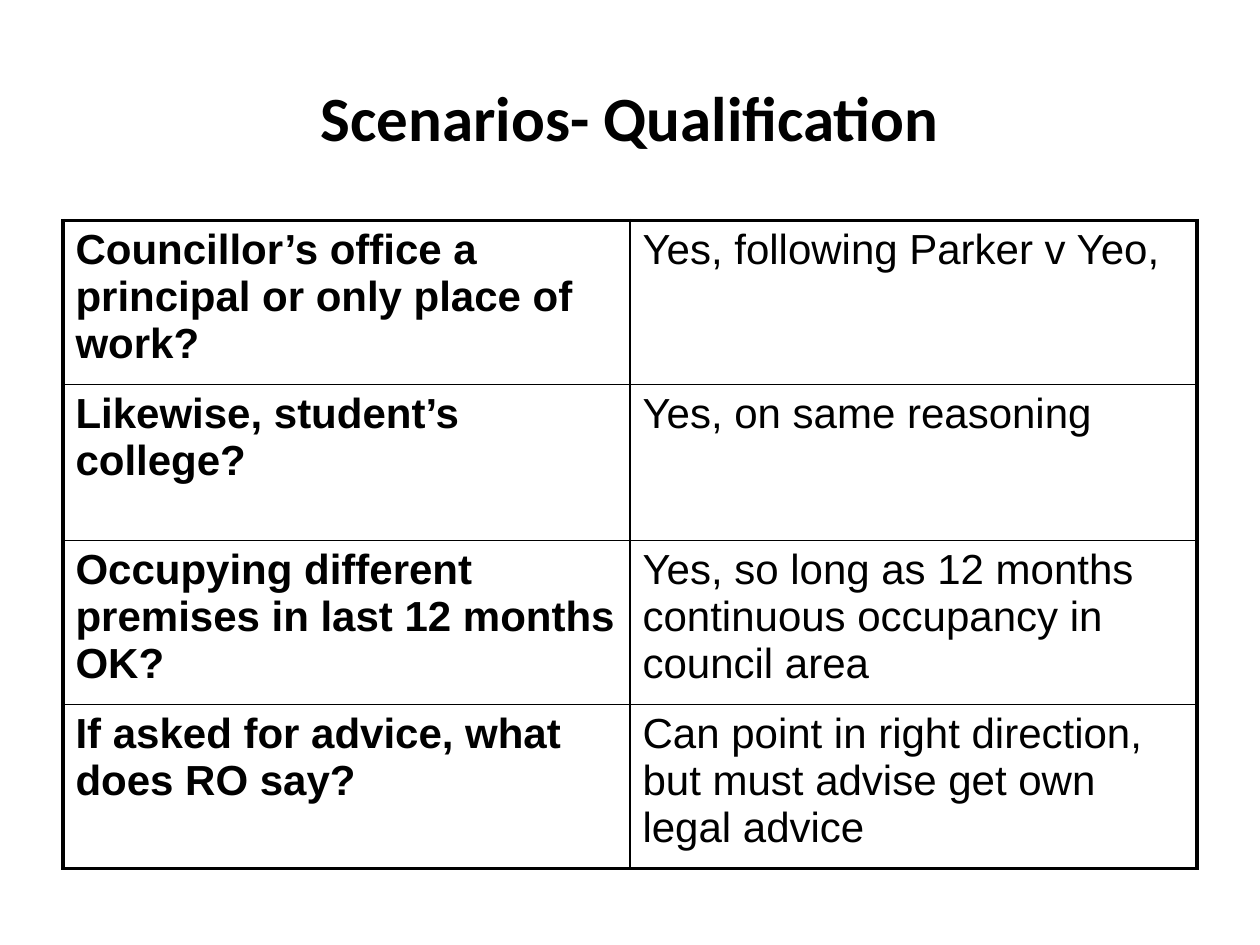
from dataclasses import dataclass

import lxml.etree
import pptx
import pptx.dml.color
import pptx.enum.text
import pptx.oxml.ns
import pptx.table
import pptx.text.text
import pptx.util

Pt = pptx.util.Pt
BLACK = pptx.dml.color.RGBColor(0x00, 0x00, 0x00)
OUTER_LINE = 2.25
INNER_LINE = 1


@dataclass
class Scenario:
    question: str
    answer: str
    height: float


SCENARIOS = [
    Scenario("Councillor’s office a principal or only place of work?",
             "Yes, following Parker v Yeo,", 93.6),
    Scenario("Likewise, student’s college?", "Yes, on same reasoning", 89.28),
    Scenario("Occupying different premises in last 12 months OK?",
             "Yes, so long as 12 months continuous occupancy in council area", 93.6),
    Scenario("If asked for advice, what does RO say?",
             "Can point in right direction, but must advise get own legal advice", 93.6),
]


def style_paragraph(para: pptx.text.text._Paragraph, name: str, size: float, bold: bool) -> None:
    para.font.name = name
    para.font.size = Pt(size)
    para.font.bold = bold
    para.font.color.rgb = BLACK


def add_border(cell: pptx.table._Cell, side: str, width: float) -> None:
    qn = pptx.oxml.ns.qn
    properties = cell._tc.get_or_add_tcPr()
    line = lxml.etree.SubElement(properties, qn(f"a:ln{side}"), w=str(Pt(width)))
    fill = lxml.etree.SubElement(line, qn("a:solidFill"))
    lxml.etree.SubElement(fill, qn("a:srgbClr"), val=str(BLACK))


def fill_cell(table: pptx.table.Table, row: int, column: int, text: str) -> None:
    cell = table.cell(row, column)
    cell.text = text
    style_paragraph(cell.text_frame.paragraphs[0], "Arial", 24, bold=column == 0)
    cell.margin_left = cell.margin_right = Pt(7.2)
    cell.margin_top = cell.margin_bottom = Pt(3.6)
    # Edges of the table are heavier than the lines between cells
    on_edge = {
        "L": column == 0,
        "R": column == len(table.columns) - 1,
        "T": row == 0,
        "B": row == len(table.rows) - 1,
    }
    for side, outer in on_edge.items():
        add_border(cell, side, OUTER_LINE if outer else INNER_LINE)
    cell.fill.background()


def main() -> None:
    deck = pptx.Presentation()
    deck.slide_width, deck.slide_height = Pt(720), Pt(540)
    page = deck.slides.add_slide(deck.slide_layouts[6])

    # Title
    box = page.shapes.add_textbox(Pt(36), Pt(21.6), Pt(648), Pt(90))
    box.text_frame.word_wrap = True
    box.text_frame.vertical_anchor = pptx.enum.text.MSO_ANCHOR.MIDDLE
    para = box.text_frame.paragraphs[0]
    para.text = "Scenarios- Qualification"
    para.alignment = pptx.enum.text.PP_ALIGN.CENTER
    style_paragraph(para, "Calibri", 36, bold=True)

    # Questions and answers
    total_height = sum(scenario.height for scenario in SCENARIOS)
    table = page.shapes.add_table(
        len(SCENARIOS), 2, Pt(36), Pt(126), Pt(648), Pt(total_height)).table
    table.first_row = False
    table.horz_banding = False
    for row, scenario in enumerate(SCENARIOS):
        table.rows[row].height = Pt(scenario.height)
        for column, text in enumerate((scenario.question, scenario.answer)):
            fill_cell(table, row, column, text)

    deck.save("out.pptx")


if __name__ == "__main__":
    main()
